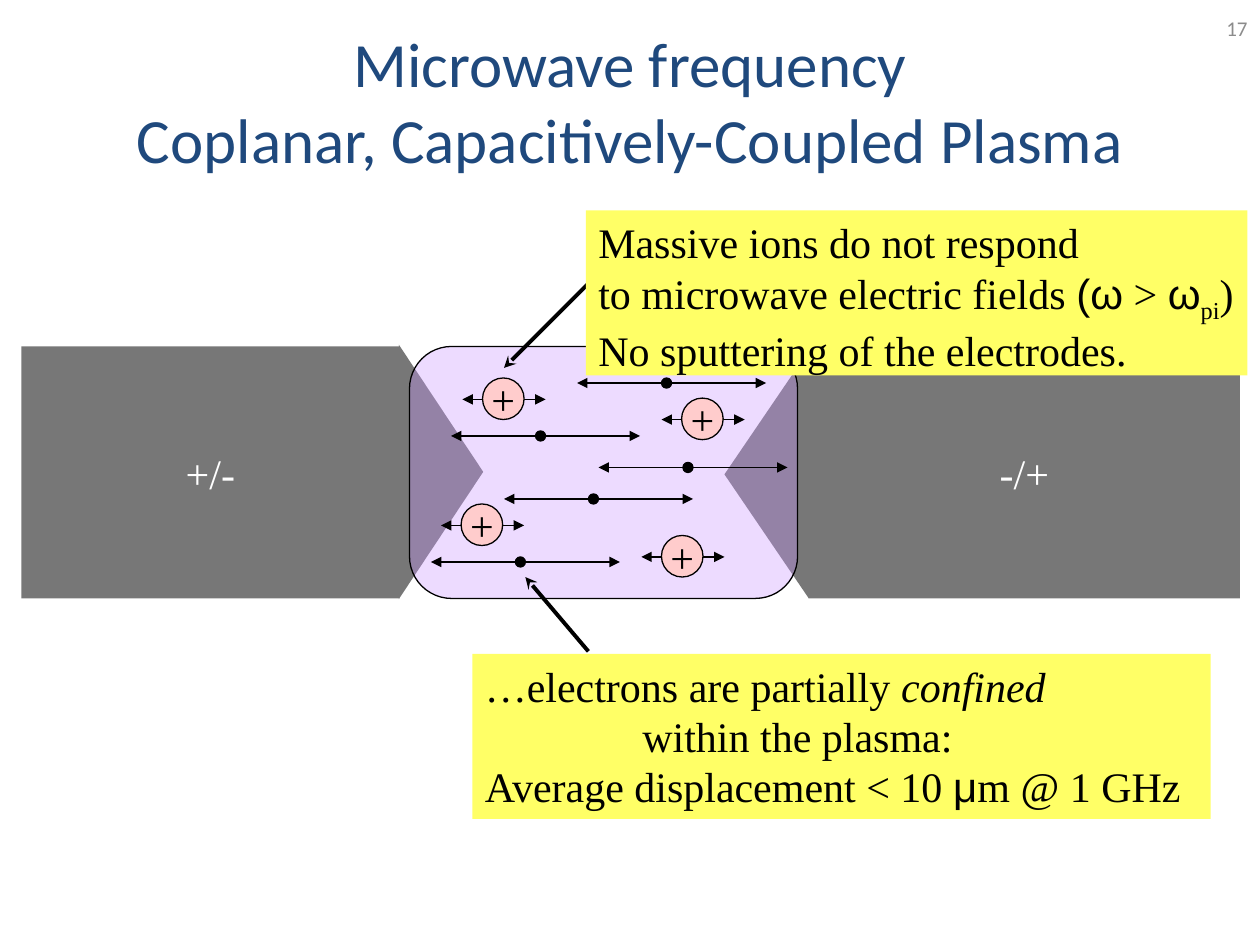
from lxml import etree
from pptx import Presentation
from pptx.dml.color import RGBColor
from pptx.enum.shapes import MSO_CONNECTOR, MSO_SHAPE
from pptx.enum.text import MSO_ANCHOR, MSO_AUTO_SIZE, PP_ALIGN
from pptx.oxml.ns import qn
from pptx.util import Inches, Pt

RECTANGLE, TRIANGLE = MSO_SHAPE.RECTANGLE, MSO_SHAPE.ISOSCELES_TRIANGLE
ROUNDED, OVAL = MSO_SHAPE.ROUNDED_RECTANGLE, MSO_SHAPE.OVAL
STRAIGHT = MSO_CONNECTOR.STRAIGHT
TOP, MIDDLE = MSO_ANCHOR.TOP, MSO_ANCHOR.MIDDLE
LEFT, CENTER, RIGHT = PP_ALIGN.LEFT, PP_ALIGN.CENTER, PP_ALIGN.RIGHT
NO_AUTOFIT = MSO_AUTO_SIZE.NONE

COLORS = {
    "title": "1F497D",
    "number": "8C8C8C",
    "electrode": "777777",
    "plasma": "CC99FF",
    "ion": "FFCCCC",
    "note": "FFFF66",
    "ink": "000000",
    "light": "FFFFFF",
}
SERIF, SANS, HEADING = "Times New Roman", "Arial", "Calibri"


class DiagramSlide:
    def __init__(self, slide):
        self.slide = slide

    def color(self, name):
        return RGBColor.from_string(COLORS[name])

    def run(self, paragraph, text, font=SERIF, size=24, color="ink", italic=None, baseline=None):
        run = paragraph.add_run()
        run.text = text
        run.font.name = font
        run.font.size = Pt(size)
        run.font.color.rgb = self.color(color)
        run.font.italic = italic
        if baseline:
            run.font._element.set("baseline", str(baseline))

    def place(self, item, left, top, width, height):
        item.left, item.top = Inches(left), Inches(top)
        item.width, item.height = Inches(width), Inches(height)

    def title(self, lines, box):
        title = self.slide.shapes.title
        self.place(title, *box)
        frame = title.text_frame
        frame.auto_size = NO_AUTOFIT
        frame.vertical_anchor = MIDDLE
        paragraph = frame.paragraphs[0]
        paragraph.alignment = CENTER
        for index, line in enumerate(lines):
            if index:
                paragraph.add_line_break()
            self.run(paragraph, line, HEADING, 36, "title")

    def page_number(self, number, box):
        frame = self.slide.shapes.add_textbox(*map(Inches, box)).text_frame
        frame.word_wrap = True
        frame.vertical_anchor = MIDDLE
        frame.paragraphs[0].alignment = RIGHT
        self.run(frame.paragraphs[0], number, HEADING, 12, "number")

    def shape(self, kind, box, fill, outlined=False):
        shape = self.slide.shapes.add_shape(kind, *map(Inches, box))
        shape.shadow.inherit = False
        shape.fill.solid()
        shape.fill.fore_color.rgb = self.color(fill)
        if outlined:
            shape.line.color.rgb = self.color("ink")
            shape.line.width = Pt(0.75)
        else:
            shape.line.fill.background()
        return shape

    def label(self, shape, text, color):
        frame = shape.text_frame
        frame.word_wrap = False
        frame.vertical_anchor = MIDDLE
        frame.paragraphs[0].alignment = CENTER
        self.run(frame.paragraphs[0], text, color=color)

    def electrode(self, box, text):
        self.label(self.shape(RECTANGLE, box, "electrode"), text, "light")

    def electrode_tip(self, box, rotation):
        self.shape(TRIANGLE, box, "electrode").rotation = rotation

    def plasma(self, box, opacity):
        plasma = self.shape(ROUNDED, box, "plasma", outlined=True)
        plasma.adjustments[0] = 0.167
        fill = plasma._element.spPr.find(qn("a:solidFill"))
        etree.SubElement(fill[0], qn("a:alpha"), val=str(opacity * 1000))

    def arrow(self, start, end, width=0.75, head="triangle", tail="triangle"):
        arrow = self.slide.shapes.add_connector(STRAIGHT, *map(Inches, (*start, *end)))
        arrow.line.color.rgb = self.color("ink")
        arrow.line.width = Pt(width)
        line = arrow.line._get_or_add_ln()
        for tag, kind in (("a:headEnd", head), ("a:tailEnd", tail)):
            if kind:
                etree.SubElement(line, qn(tag), type=kind)
        etree.SubElement(arrow._element.spPr, qn("a:effectLst"))

    def electron(self, x, y):
        self.shape(OVAL, (x - 0.04, y - 0.04, 0.08, 0.08), "ink", outlined=True)
        self.arrow((x - 0.71, y), (x + 0.79, y))

    def ion(self, x, y):
        self.arrow((x - 0.33, y), (x + 0.33, y))
        ion = self.shape(OVAL, (x - 0.17, y - 0.17, 0.33, 0.33), "ion", outlined=True)
        self.label(ion, "+", "ink")

    def note(self, box, lines, pointer):
        self.arrow(*pointer, width=2.25, head="stealth", tail=None)
        frame = self.shape(RECTANGLE, box, "note").text_frame
        frame.word_wrap = True
        frame.margin_right = 0
        frame.vertical_anchor = TOP
        for index, (indent, runs) in enumerate(lines):
            paragraph = frame.add_paragraph() if index else frame.paragraphs[0]
            paragraph.alignment = LEFT
            if indent:
                paragraph._p.get_or_add_pPr().set("marL", str(Inches(indent)))
            for text, style in runs:
                self.run(paragraph, text, **style)


def main():
    presentation = Presentation()
    presentation.slide_width, presentation.slide_height = Inches(10), Inches(7.5)
    page = DiagramSlide(presentation.slides.add_slide(presentation.slide_layouts[5]))

    page.electrode((0.17, 2.75, 3, 2), "+/-")
    page.electrode((6.42, 2.75, 3.42, 2), "-/+")
    page.electrode_tip((2.49, 3.41, 2.02, 0.67), 90)
    page.electrode_tip((5.1, 3.43, 1.97, 0.67), 270)
    page.plasma((3.25, 2.75, 3.08, 2), 35)
    page.title(
        ["Microwave frequency", "Coplanar, Capacitively-Coupled Plasma"],
        (0.75, 0.17, 8.5, 1.25),
    )

    for x, y in ((4.13, 4.46), (4.71, 3.96), (4.29, 3.46), (5.29, 3.04), (5.46, 3.71)):
        page.electron(x, y)
    for x, y in ((5.58, 3.33), (3.83, 4.17), (5.42, 4.42), (4, 3.17)):
        page.ion(x, y)

    sans = {"font": SANS}
    page.note(
        (4.65, 1.67, 5.25, 1.31),
        [
            (0, [("Massive ions do not respond", {})]),
            (0, [
                ("to microwave electric fields ", {}),
                ("(ω", sans),
                (" > ", {}),
                ("ω", sans),
                ("pi", {"baseline": -25000}),
                (")", {}),
            ]),
            (0, [("No sputtering of the electrodes.", {})]),
        ],
        ((4, 2.92), (4.67, 2.25)),
    )
    page.note(
        (3.75, 5.19, 5.86, 1.31),
        [
            (0, [("…electrons are partially ", {}), ("confined", {"italic": True})]),
            (1.25, [("within the plasma:", {})]),
            (0, [("Average displacement < 10 ", {}), ("μ", sans), ("m @ 1 GHz", {})]),
        ],
        ((4.17, 4.58), (4.67, 5.17)),
    )
    page.page_number("17", (7.67, 0.02, 2.33, 0.4))

    presentation.save("out.pptx")


if __name__ == "__main__":
    main()
